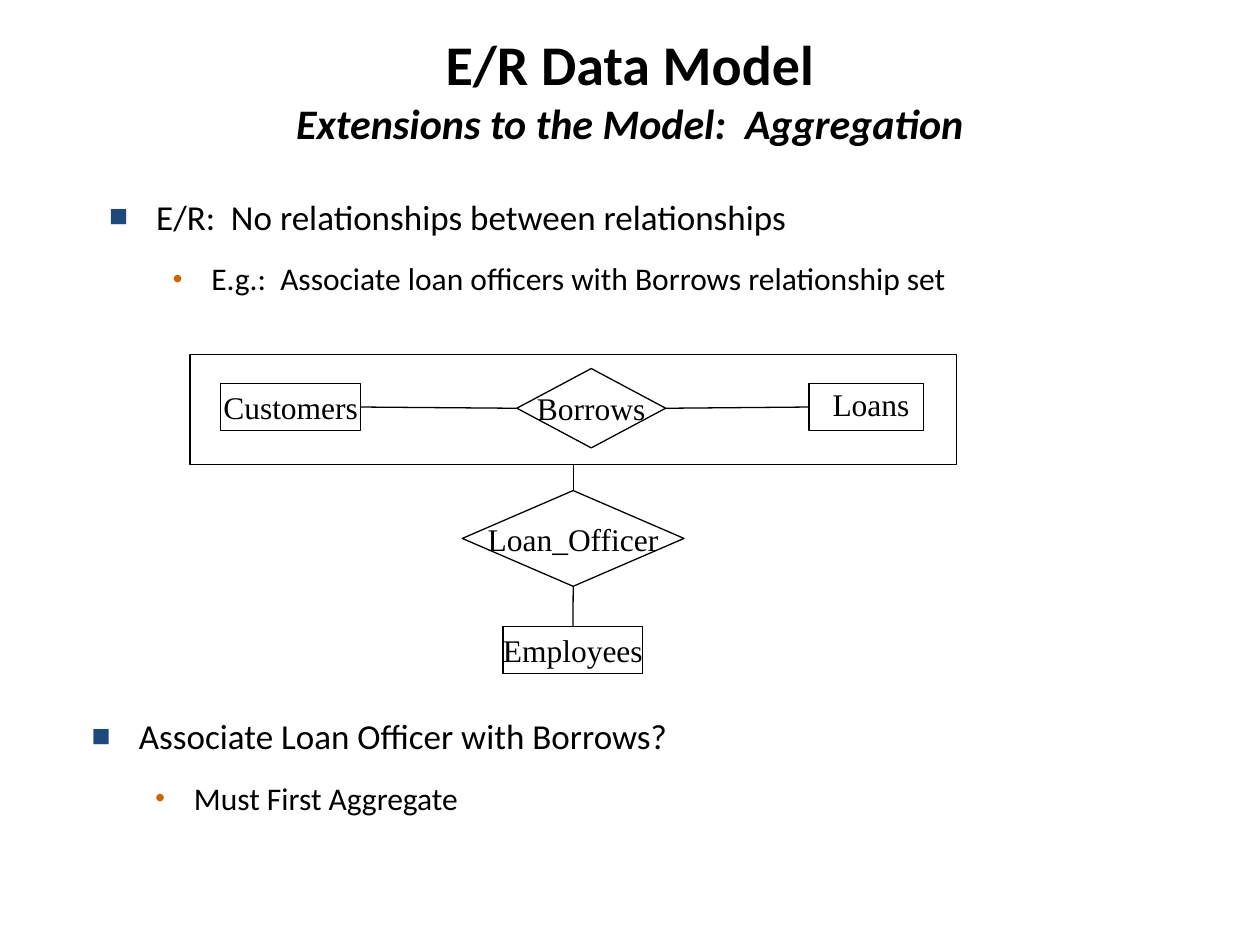
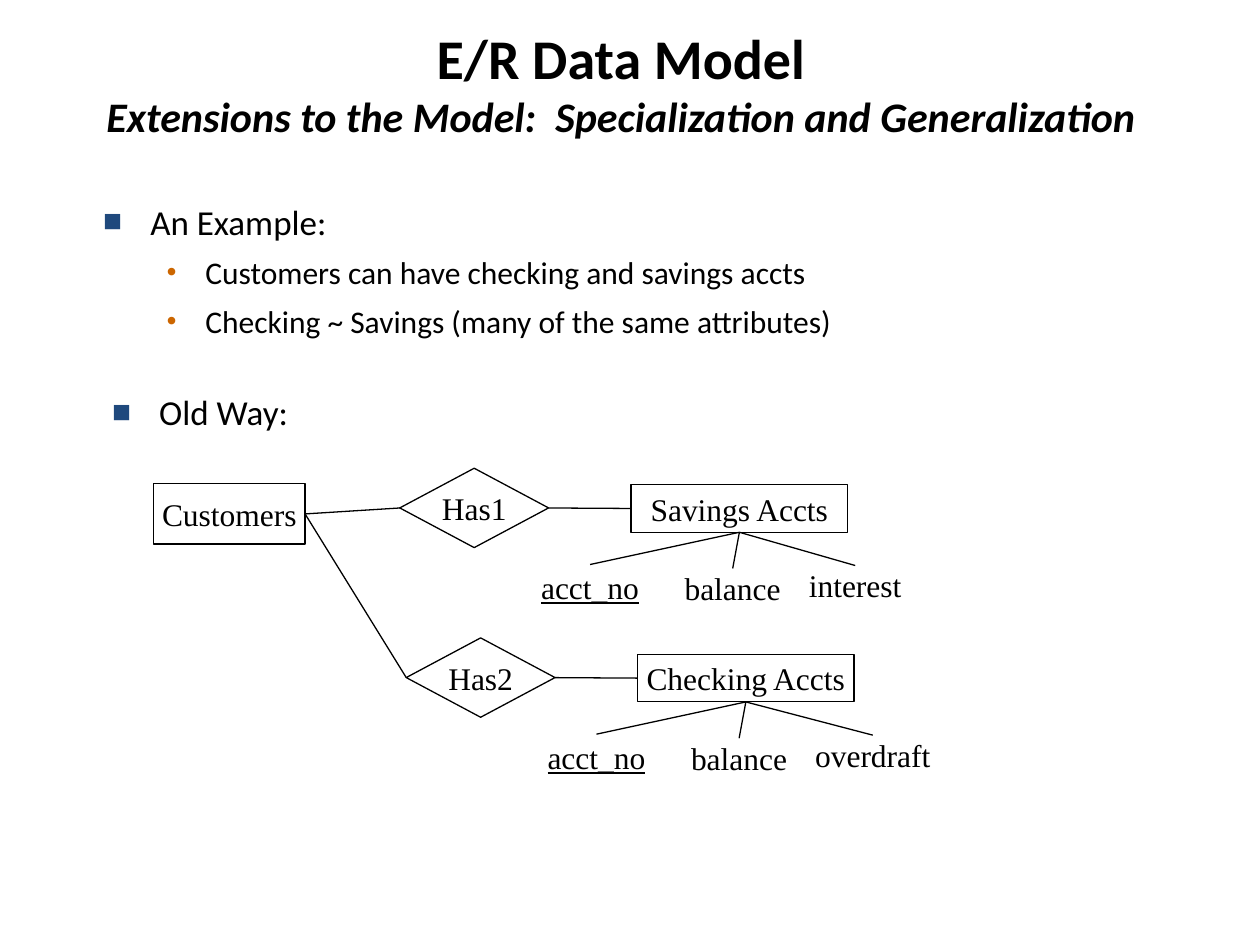
from lxml.etree import SubElement
from pptx import Presentation
from pptx.dml.color import RGBColor
from pptx.enum.shapes import MSO_CONNECTOR, MSO_SHAPE
from pptx.enum.text import MSO_ANCHOR, PP_ALIGN
from pptx.oxml.ns import qn
from pptx.util import Cm, Pt

INK = RGBColor(0x00, 0x00, 0x00)
SQUARE_BLUE = RGBColor(0x1F, 0x49, 0x7D)
DOT_ORANGE = RGBColor(0xCC, 0x66, 0x00)
HAIRLINE = Pt(0.75)
TOP, LEFT, BOTTOM, RIGHT = range(4)  # connection sites of a node

TITLE_LINES = [
    {"name": "Calibri", "size": Pt(32), "bold": True},
    {"name": "Calibri", "size": Pt(24), "bold": True, "italic": True},
]
BULLET_LEVELS = [
    {"font": {"name": "Calibri", "size": Pt(20)}, "margin": 0.95, "hang": 0.95,
     "mark": "■", "color": SQUARE_BLUE, "percent": 90},
    {"font": {"name": "Calibri", "size": Pt(18)}, "margin": 2.06, "hang": 0.79,
     "mark": "•", "color": DOT_ORANGE, "percent": 100},
]
NODE_FONT = {"name": "Times New Roman", "size": Pt(18)}
NODE_FRAME = {"word_wrap": False, "vertical_anchor": MSO_ANCHOR.MIDDLE,
              "margin_left": 0, "margin_right": 0}

# Per slide: subtitle, title corner, and bullet blocks as
# (box in cm, line spacing of the second level, [(level, text)])
PAGES = [
    ("Extensions to the Model:  Aggregation", (0, 0.2), [
        ((1.95, 3.81, 22.63, 1.68), 1.3, [
            (0, "E/R:  No relationships between relationships"),
            (1, "E.g.:  Associate loan officers with Borrows relationship set")]),
        ((1.6, 14.28, 23.57, 1.68), 1.3, [
            (0, "Associate Loan Officer with Borrows?"),
            (1, "Must First Aggregate")]),
    ]),
    ("Extensions to the Model:  Specialization and Generalization", (-0.18, 0.06), [
        ((1.83, 3.91, 19.13, 4.52), 1.0, [
            (0, "An Example:"),
            (1, "Customers can have checking and savings accts"),
            (1, "Checking ~ Savings (many of the same attributes)")]),
        ((2.01, 7.75, 4.9, 1.45), 1.0, [(0, "Old Way:")]),
    ]),
]


def add_node(slide, text, box, outline=None, underline=None):
    """Add a centred diagram label; outline is a preset shape or None."""
    lengths = [Cm(value) for value in box]
    if outline is None:
        node = slide.shapes.add_textbox(*lengths)
    else:
        node = slide.shapes.add_shape(outline, *lengths)
        node.shadow.inherit = False
        node.fill.background()
        node.line.color.rgb = INK
        node.line.width = HAIRLINE
    for key, value in NODE_FRAME.items():
        setattr(node.text_frame, key, value)
    paragraph = node.text_frame.paragraphs[0]
    paragraph.alignment = PP_ALIGN.CENTER
    if text:
        run = paragraph.add_run()
        run.text = text
        for key, value in (NODE_FONT | {"underline": underline}).items():
            setattr(run.font, key, value)
        run.font.color.rgb = INK
    return node


def link(slide, start, start_site, end, end_site):
    line = slide.shapes.add_connector(MSO_CONNECTOR.STRAIGHT, 0, 0, 0, 0)
    line.begin_connect(start, start_site)
    line.end_connect(end, end_site)
    line.line.color.rgb = INK
    line.line.width = HAIRLINE
    SubElement(line._element.spPr, qn("a:effectLst"))


deck = Presentation()
deck.slide_width, deck.slide_height = Cm(25.4), Cm(19.05)

# Titles and bullets
slides = []
for subtitle, (left, top), blocks in PAGES:
    slide = deck.slides.add_slide(deck.slide_layouts[6])
    slides.append(slide)

    title = slide.shapes.add_textbox(Cm(left), Cm(top), Cm(25.4), Cm(3.18)).text_frame
    title.word_wrap = True
    title.vertical_anchor = MSO_ANCHOR.MIDDLE
    heading = title.paragraphs[0]
    heading.alignment = PP_ALIGN.CENTER
    for text, style in zip(("E/R Data Model", subtitle), TITLE_LINES):
        if heading.runs:
            heading.add_line_break()
        run = heading.add_run()
        run.text = text
        for key, value in style.items():
            setattr(run.font, key, value)
        run.font.color.rgb = INK

    for box, spacing, items in blocks:
        body = slide.shapes.add_textbox(*[Cm(value) for value in box]).text_frame
        body.word_wrap = True
        for index, (level, text) in enumerate(items):
            style = BULLET_LEVELS[level]
            item = body.add_paragraph() if index else body.paragraphs[0]
            item.level = level
            if level:
                item.line_spacing = spacing
            run = item.add_run()
            run.text = text
            for key, value in style["font"].items():
                setattr(run.font, key, value)
            run.font.color.rgb = INK

            props = item._p.get_or_add_pPr()
            props.set("marL", str(Cm(style["margin"])))
            props.set("indent", str(-Cm(style["hang"])))
            before = SubElement(props, qn("a:spcBef"))
            SubElement(before, qn("a:spcPct"), val="35000")
            color = SubElement(props, qn("a:buClr"))
            SubElement(color, qn("a:srgbClr"), val=str(style["color"]))
            SubElement(props, qn("a:buSzPct"), val=str(style["percent"] * 1000))
            SubElement(props, qn("a:buFont"), typeface="Times New Roman")
            SubElement(props, qn("a:buChar"), char=style["mark"])

aggregation, specialization = slides
RECT, DIAMOND = MSO_SHAPE.RECTANGLE, MSO_SHAPE.DIAMOND

# Aggregation: Borrows and its entities act as one entity
aggregate = add_node(aggregation, "", (3.83, 7.15, 15.45, 2.21), RECT)
customers = add_node(aggregation, "Customers", (4.45, 7.73, 2.82, 0.95), RECT)
borrows = add_node(aggregation, "Borrows", (10.42, 7.43, 3, 1.6), DIAMOND)
loans = add_node(aggregation, "", (16.31, 7.73, 2.31, 0.95), RECT)
add_node(aggregation, "Loans", (16.52, 7.63, 2.08, 1.02))
loan_officer = add_node(aggregation, "Loan_Officer", (9.32, 9.89, 4.47, 1.93), DIAMOND)
employees = add_node(aggregation, "Employees", (10.14, 12.63, 2.82, 0.95), RECT)
link(aggregation, customers, RIGHT, borrows, LEFT)
link(aggregation, borrows, RIGHT, loans, LEFT)
link(aggregation, aggregate, BOTTOM, loan_officer, TOP)
link(aggregation, loan_officer, BOTTOM, employees, TOP)

# Specialization: one branch per account type, the second shifted down
customers = add_node(specialization, "Customers", (3.1, 9.75, 3.05, 1.22), RECT)
branches = [
    ("Has1", "Savings Accts", "interest", 1.96),
    ("Has2", "Checking Accts", "overdraft", 2.41),
]
for index, (relationship, entity, own_attribute, own_width) in enumerate(branches):
    dx, dy = 0.13 * index, 3.42 * index
    has = add_node(specialization, relationship, (8.06 + dx, 9.44 + dy, 3, 1.6), DIAMOND)
    accounts = add_node(specialization, entity, (12.72 + dx, 9.77 + dy, 4.37, 0.96), RECT)
    link(specialization, customers, RIGHT, has, LEFT)
    link(specialization, has, RIGHT, accounts, LEFT)
    for name, left, top, width, height, is_key in [
        ("acct_no", 10.69, 11.38, 2.41, 0.91, True),
        ("balance", 13.76, 11.46, 2.02, 0.79, None),
        (own_attribute, 16.26, 11.4, own_width, 0.79, None),
    ]:
        attribute = add_node(specialization, name, (left + dx, top + dy, width, height),
                             underline=is_key)
        link(specialization, accounts, BOTTOM, attribute, TOP)

deck.save("out.pptx")
